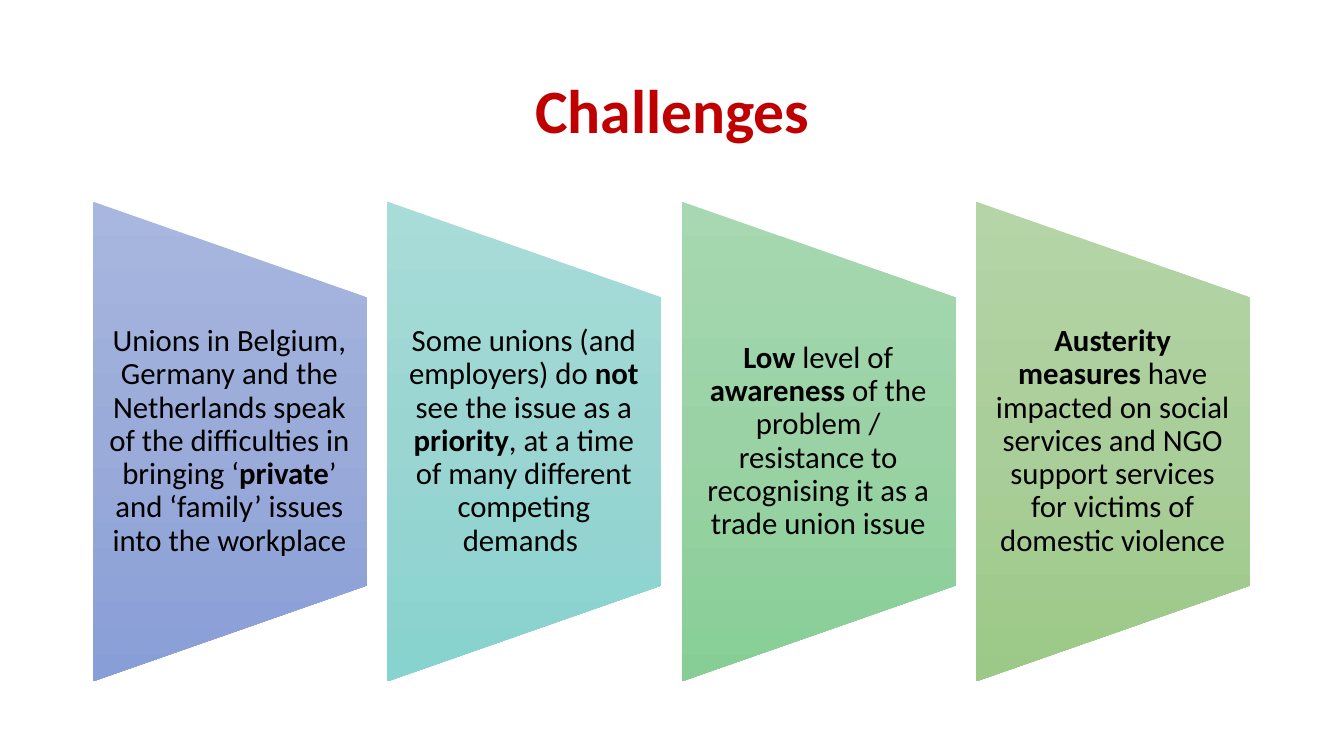
from dataclasses import dataclass

import pptx
import pptx.dml.color
import pptx.enum.shapes
import pptx.enum.text
import pptx.oxml
import pptx.oxml.ns
import pptx.util
from pptx.util import Inches


@dataclass(frozen=True)
class Theme:
    font: str = "Calibri"
    title_color: str = "C00000"
    text_color: str = "000000"
    title_size: int = 44
    body_size: int = 22
    line_spacing: float = 0.9


@dataclass(frozen=True)
class Challenge:
    text: str
    gradient: tuple[str, str, str]


THEME = Theme()
LEFT, TOP = 0.92, 2.0
PANEL_W, PANEL_H, GAP = 2.72, 4.76, 0.2
TEXT_H = 2.86

CHALLENGES = [
    Challenge(
        "Unions in Belgium, Germany and the Netherlands speak of the difficulties in "
        "bringing ‘*private*’ and ‘family’ issues into the workplace",
        ("A8B7DF", "9AABD9", "889ED7"),
    ),
    Challenge(
        "Some unions (and employers) do *not* see the issue as a *priority*, "
        "at a time of many different competing demands ",
        ("A8DCD9", "9AD5D2", "87D3CF"),
    ),
    Challenge(
        "*Low* level of *awareness* of the problem / resistance to recognising it "
        "as a trade union issue",
        ("A7D8B1", "9AD2A5", "87CE96"),
    ),
    Challenge(
        "*Austerity measures* have impacted on social services and NGO support "
        "services for victims of domestic violence",
        ("B5D5A7", "AACE9A", "9CC987"),
    ),
]


def add_text(slide, text: str, *, left: float, top: float, width: float, height: float,
             size: int, color: str, inset_left: float = 0.1, inset_right: float = 0.1) -> None:
    s = slide.shapes.add_textbox(Inches(left), Inches(top), Inches(width), Inches(height))
    tf = s.text_frame
    tf.word_wrap = True
    tf.vertical_anchor = pptx.enum.text.MSO_ANCHOR.MIDDLE
    tf.margin_left, tf.margin_right = Inches(inset_left), Inches(inset_right)
    tf.margin_top = tf.margin_bottom = 0
    p = tf.paragraphs[0]
    p.alignment = pptx.enum.text.PP_ALIGN.CENTER
    p.line_spacing = THEME.line_spacing
    for i, part in enumerate(text.split("*")):
        if part:
            r = p.add_run()
            r.text = part
            r.font.name = THEME.font
            r.font.size = pptx.util.Pt(size)
            r.font.bold = i % 2 == 1
            r.font.color.rgb = pptx.dml.color.RGBColor.from_string(color)


def fill_gradient(s, colors: tuple[str, str, str]) -> None:
    s.fill.background()
    stops = "".join(
        f'<a:gs pos="{i * 50000}"><a:srgbClr val="{color}"/></a:gs>'
        for i, color in enumerate(colors)
    )
    gradient = pptx.oxml.parse_xml(
        f'<a:gradFill {pptx.oxml.ns.nsdecls("a")} rotWithShape="0">'
        f'<a:gsLst>{stops}</a:gsLst><a:lin ang="5400000" scaled="0"/></a:gradFill>'
    )
    sp_pr = s._element.spPr
    sp_pr.replace(sp_pr.find(pptx.oxml.ns.qn("a:noFill")), gradient)


def add_panel(slide, challenge: Challenge, left: float) -> None:
    center_x, center_y = left + PANEL_W / 2, TOP + PANEL_H / 2
    s = slide.shapes.add_shape(
        pptx.enum.shapes.MSO_SHAPE.FLOWCHART_MANUAL_OPERATION,
        Inches(center_x - PANEL_H / 2), Inches(center_y - PANEL_W / 2),
        Inches(PANEL_H), Inches(PANEL_W),
    )
    s.rotation = 270
    s.shadow.inherit = False
    s.line.fill.background()
    fill_gradient(s, challenge.gradient)
    add_text(slide, challenge.text, left=left, top=center_y - TEXT_H / 2,
             width=PANEL_W, height=TEXT_H, size=THEME.body_size,
             color=THEME.text_color, inset_left=0.15, inset_right=0.16)


def main() -> None:
    prs = pptx.Presentation()
    prs.slide_width, prs.slide_height = Inches(13.33), Inches(7.5)
    slide = prs.slides.add_slide(prs.slide_layouts[6])
    add_text(slide, "*Challenges*", left=LEFT, top=0.4, width=11.5, height=1.45,
             size=THEME.title_size, color=THEME.title_color)
    for i, challenge in enumerate(CHALLENGES):
        add_panel(slide, challenge, LEFT + i * (PANEL_W + GAP))
    prs.save("out.pptx")


if __name__ == "__main__":
    main()
